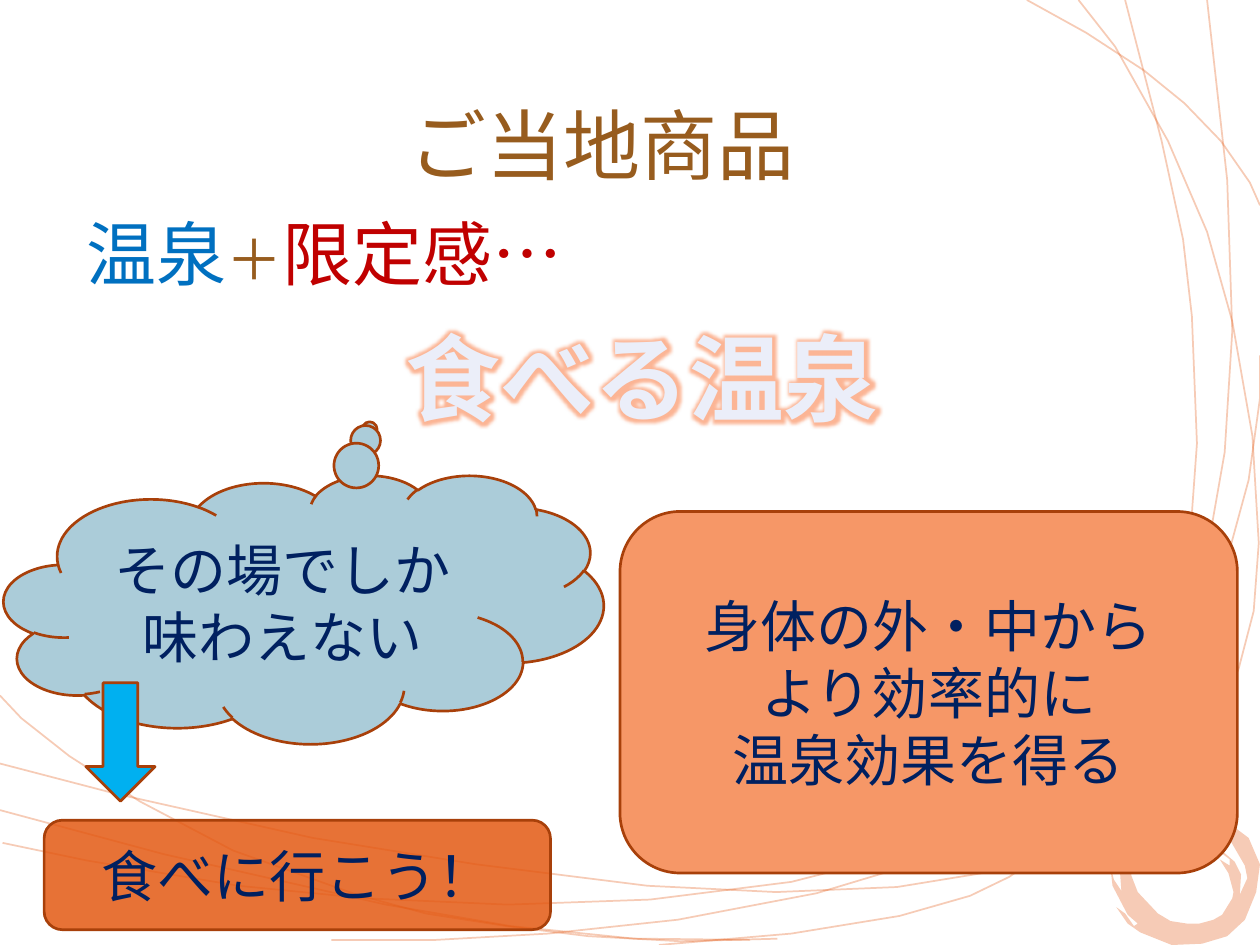
from lxml.etree import SubElement
from pptx import Presentation
from pptx.dml.color import RGBColor
from pptx.enum.shapes import MSO_SHAPE
from pptx.enum.text import MSO_ANCHOR, PP_ALIGN
from pptx.oxml.ns import qn
from pptx.util import Pt

COLORS = {
    "swirl": "E3560E", "title": "975C1E", "spring": "0070C0", "limited": "C00000",
    "slogan": "EBEEF9", "glow": "F96B2B", "cloud": "ABCCD9", "outline": "A8400A",
    "arrow": "00B0F0", "panel": "F69767", "navy": "002060",
}
FONT = "Calibri"
GRID = Pt(0.72)
SWIRLS = [
    [(0, 552), (17, 570), (55, 600), (111, 636), (185, 675), (283, 710), (338, 725),
     (402, 735), (467, 743), (540, 747), (617, 745)],
    [(523, 750), (628, 741), (714, 727), (770, 711), (801, 696), (828, 677), (861, 644),
     (896, 596), (924, 527), (944, 435), (950, 352), (946, 251), (939, 190), (922, 112),
     (893, 0)],
    [(0, 606), (92, 630), (248, 665), (378, 686), (514, 703), (616, 708), (712, 704),
     (798, 690), (852, 673), (897, 646), (930, 620), (960, 583), (983, 531), (995, 485),
     (999, 431), (994, 346), (978, 255), (958, 184), (927, 112), (885, 37), (856, 0)],
    [(2, 669), (69, 683), (189, 703), (290, 713), (403, 718), (516, 714), (628, 700),
     (714, 678), (790, 645), (861, 602), (908, 560), (948, 506), (970, 458), (991, 381),
     (1000, 316), (1000, 282)],
    [(263, 746), (346, 746), (435, 741), (538, 730), (648, 709), (728, 685), (802, 651),
     (863, 610), (910, 555), (935, 511), (959, 433), (972, 359), (978, 263), (974, 143),
     (958, 0)],
    [(815, 0), (862, 26), (908, 56), (940, 82), (969, 112), (992, 145), (1000, 163)],
    [(0, 643), (130, 678), (306, 718), (405, 735), (503, 745), (595, 746)],
]
RING = [
    (918, 643), (922, 639), (918, 646), (907, 658), (902, 667), (897, 687), (898, 695),
    (903, 708), (919, 725), (929, 731), (942, 733), (952, 733), (963, 730), (970, 726),
    (978, 713), (979, 708), (975, 693), (968, 682), (976, 687), (976, 682), (964, 673),
    (966, 672), (980, 684), (985, 694), (984, 710), (990, 697), (988, 687), (977, 668),
    (979, 665), (973, 659), (964, 655), (944, 654), (956, 649), (948, 650), (947, 647),
    (955, 646), (975, 653), (991, 665), (1000, 686), (997, 708), (988, 730), (974, 743),
    (954, 749), (930, 750), (905, 740), (895, 733), (886, 720), (893, 725), (900, 735),
    (903, 733), (895, 726), (883, 703), (881, 686), (884, 698), (890, 707), (888, 679),
    (894, 666), (908, 652),
]


def rgb(name):
    """Return the named colour."""
    return RGBColor.from_string(COLORS[name])


def set_opacity(color_format, percent):
    """Make a solid fill or line partly transparent."""
    color = color_format._xPr.find(qn("a:solidFill"))[0]
    SubElement(color, qn("a:alpha"), val=str(percent * 1000))


def style_font(font, size, color):
    """Set typeface, size and colour."""
    font.name, font.size = FONT, Pt(size)
    font.color.rgb = rgb(color)


def place(part, box):
    """Move a part to a box given in points."""
    part.left, part.top, part.width, part.height = map(Pt, box)


def add_outline(slide, points, close=False):
    """Draw a freeform through points on the slide grid."""
    builder = slide.shapes.build_freeform(*points[0], scale=GRID)
    builder.add_line_segments(points[1:], close=close)
    outline = builder.convert_to_shape()
    outline.shadow.inherit = False
    return outline


def add_background(slide):
    """Draw the thin swirls and the brushed ring."""
    for points in SWIRLS:
        swirl = add_outline(slide, points)
        swirl.fill.background()
        swirl.line.width = Pt(1)
        swirl.line.fill.solid()
        swirl.line.fill.fore_color.rgb = rgb("swirl")
        set_opacity(swirl.line.fill, 29)
    ring = add_outline(slide, RING, close=True)
    ring.fill.solid()
    ring.fill.fore_color.rgb = rgb("swirl")
    set_opacity(ring.fill, 30)
    ring.line.fill.background()


def add_title(slide, box):
    """Fill the title placeholder."""
    title = slide.shapes.title
    place(title, box)
    title.text_frame.text = "ご当地商品"
    heading = title.text_frame.paragraphs[0]
    heading.alignment = PP_ALIGN.CENTER
    style_font(heading.font, 44, "title")


def add_formula(slide, box):
    """Fill the body placeholder with the coloured formula."""
    body = slide.placeholders[1]
    place(body, box)
    formula = body.text_frame.paragraphs[0]
    formula.alignment = PP_ALIGN.JUSTIFY
    properties = formula._p.get_or_add_pPr()
    properties.set("marL", "0")
    properties.set("indent", "0")
    SubElement(properties, qn("a:buNone"))
    for term, size, color in (("温泉", 40, "spring"), ("＋", 32, "title"),
                              ("限定感…", 40, "limited")):
        run = formula.add_run()
        run.text = term
        style_font(run.font, size, color)


def add_slogan(slide, box):
    """Write the glowing slogan."""
    slogan = slide.shapes.add_textbox(*map(Pt, box))
    slogan.text_frame.word_wrap = False
    line = slogan.text_frame.paragraphs[0]
    line.alignment = PP_ALIGN.CENTER
    run = line.add_run()
    run.text = "食べる温泉"
    run.font.size, run.font.bold = Pt(54), True
    run.font.color.rgb = rgb("slogan")
    effects = SubElement(run.font._element, qn("a:effectLst"))
    glow = SubElement(effects, qn("a:glow"), rad=str(Pt(8)))
    tint = SubElement(glow, qn("a:srgbClr"), val=COLORS["glow"])
    SubElement(tint, qn("a:alpha"), val="50000")
    run.font.name = FONT


def add_block(slide, preset, box, color, text=""):
    """Add an outlined shape with centred text."""
    block = slide.shapes.add_shape(preset, *map(Pt, box))
    block.shadow.inherit = False
    block.fill.solid()
    block.fill.fore_color.rgb = rgb(color)
    block.line.color.rgb = rgb("outline")
    block.line.width = Pt(1.54)
    if text:
        frame = block.text_frame
        frame.text = text
        frame.vertical_anchor = MSO_ANCHOR.MIDDLE
        for paragraph in frame.paragraphs:
            paragraph.alignment = PP_ALIGN.CENTER
            style_font(paragraph.font, 32, "navy")
    return block


def add_reasons(slide, box):
    """Place the cloud, arrow, call to action and benefit panel."""
    left, top, width, height = box
    cloud = add_block(slide, MSO_SHAPE.CLOUD_CALLOUT, (left, top, 342.7, 153.4),
                      "cloud", "その場でしか味わえない")
    cloud.adjustments[0], cloud.adjustments[1] = 0.11, -0.67
    add_block(slide, MSO_SHAPE.DOWN_ARROW, (left + 46.8, top + 118.8, 39.6, 67.7), "arrow")
    action = add_block(slide, MSO_SHAPE.ROUNDED_RECTANGLE,
                       (left + 23, top + height - 62.6, 289.4, 62.6),
                       "swirl", "食べに行こう！")
    set_opacity(action.fill, 83)
    add_block(slide, MSO_SHAPE.ROUNDED_RECTANGLE,
              (left + width - 352.8, top + 20.9, 352.8, 206.6), "panel",
              "身体の外・中から\nより効率的に\n温泉効果を得る")


def main():
    """Build and save the slide."""
    deck = Presentation()
    deck.slide_width, deck.slide_height = Pt(720), Pt(540)
    slide = deck.slides.add_slide(deck.slide_layouts[1])
    add_background(slide)
    add_title(slide, (20.2, 37.4, 648, 90))
    add_formula(slide, (42.5, 116.6, 648, 391.7))
    add_slogan(slide, (222.5, 179.3, 288.7, 72.7))
    add_reasons(slide, (2.2, 271.4, 704.9, 259.9))
    deck.save("out.pptx")


if __name__ == "__main__":
    main()
